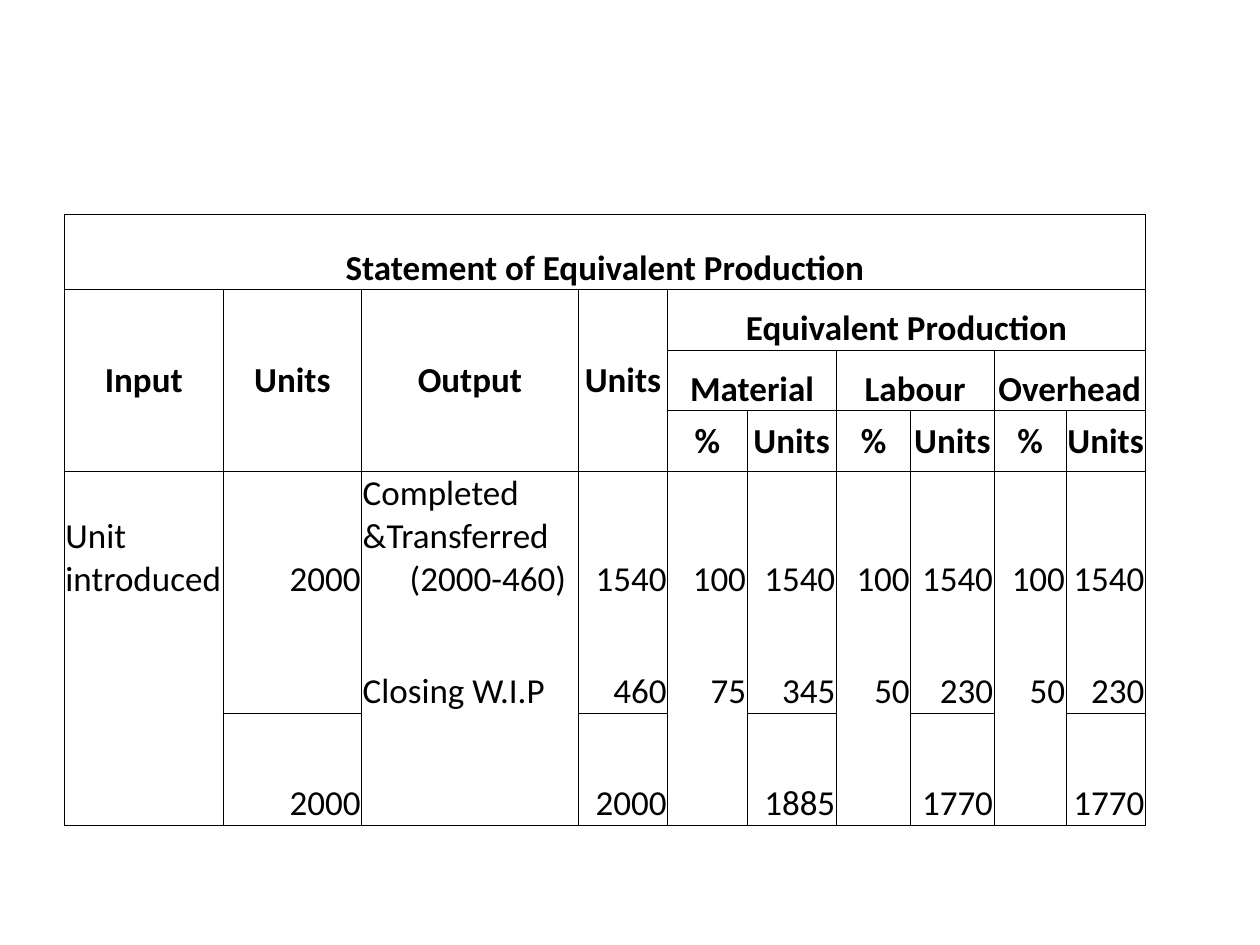
from dataclasses import dataclass

from lxml.etree import SubElement
from pptx import Presentation
from pptx.dml.color import RGBColor
from pptx.enum.text import MSO_ANCHOR, PP_ALIGN
from pptx.oxml.ns import qn
from pptx.util import Cm, Pt


@dataclass(frozen=True)
class Theme:
    font: str = "Calibri"
    size: Pt = Pt(20)
    ink: str = "000000"
    border: Pt = Pt(0.5)
    margin: Cm = Cm(0.02)
    indent: Cm = Cm(0.95)


THEME = Theme()

COLUMN_WIDTHS = [3.2, 2.79, 4.37, 1.8, 1.6, 1.8, 1.5, 1.68, 1.45, 1.6]
ROW_HEIGHTS = [1.52, 1.22, 1.22, 1.22, 2.26, 2.26, 2.26]
HEADER_ROWS = 4
TOTAL_ROW = len(ROW_HEIGHTS) - 1

# Headings: row, column, rows spanned, columns spanned, text, anchor
HEADINGS = [
    (0, 0, 1, 10, "Statement of Equivalent Production", MSO_ANCHOR.BOTTOM),
    *[(1, column, 3, 1, text, MSO_ANCHOR.MIDDLE)
      for column, text in enumerate(["Input", "Units", "Output", "Units"])],
    (1, 4, 1, 6, "Equivalent Production", MSO_ANCHOR.BOTTOM),
    *[(2, 4 + 2 * pair, 1, 2, text, MSO_ANCHOR.BOTTOM)
      for pair, text in enumerate(["Material", "Labour", "Overhead"])],
    *[(3, column, 1, 1, "Units" if column % 2 else "%", MSO_ANCHOR.MIDDLE)
      for column in range(4, 10)],
]

BODY = [
    ["Unit introduced", "2000", "Completed &Transferred\n(2000-460)", "1540",
     "100", "1540", "100", "1540", "100", "1540"],
    ["", "", "Closing W.I.P", "460", "75", "345", "50", "230", "50", "230"],
    ["", "2000", "", "2000", "", "1885", "", "1770", "", "1770"],
]
TEXT_COLUMNS = (0, 2)


def set_border(cell, side, visible):
    line = SubElement(cell._tc.get_or_add_tcPr(), qn(f"a:ln{side}"), w=str(THEME.border))
    if visible:
        fill = SubElement(line, qn("a:solidFill"))
        SubElement(fill, qn("a:srgbClr"), val=THEME.ink)
    else:
        SubElement(line, qn("a:noFill"))


def format_cell(cell, row, column):
    """Rule the cell; only unit columns get a line above the totals."""
    has_total = column % 2 == 1
    top = row <= HEADER_ROWS or (row == TOTAL_ROW and has_total)
    bottom = row < HEADER_ROWS or row == TOTAL_ROW or (row == TOTAL_ROW - 1 and has_total)
    for side, visible in (("L", True), ("R", True), ("T", top), ("B", bottom)):
        set_border(cell, side, visible)
    cell.fill.background()
    cell.margin_left = cell.margin_right = cell.margin_top = THEME.margin
    cell.margin_bottom = 0


def write_cell(cell, text, alignment, anchor=MSO_ANCHOR.BOTTOM, bold=False):
    cell.text = text
    cell.vertical_anchor = anchor
    for paragraph in cell.text_frame.paragraphs:
        paragraph.alignment = alignment
        font = paragraph.font
        font.name, font.size, font.bold = THEME.font, THEME.size, bold
        font.color.rgb = RGBColor.from_string(THEME.ink)


def add_statement_table(slide):
    frame = slide.shapes.add_table(
        len(ROW_HEIGHTS), len(COLUMN_WIDTHS), Cm(1.3), Cm(4.32),
        Cm(sum(COLUMN_WIDTHS)), Cm(sum(ROW_HEIGHTS)))
    table = frame.table
    table.first_row = table.horz_banding = False
    for column, width in zip(table.columns, COLUMN_WIDTHS):
        column.width = Cm(width)
    for row, height in zip(table.rows, ROW_HEIGHTS):
        row.height = Cm(height)
    for row in range(len(ROW_HEIGHTS)):
        for column in range(len(COLUMN_WIDTHS)):
            format_cell(table.cell(row, column), row, column)
    return table


def fill_headings(table):
    for row, column, row_span, column_span, text, anchor in HEADINGS:
        cell = table.cell(row, column)
        if row_span * column_span > 1:
            cell.merge(table.cell(row + row_span - 1, column + column_span - 1))
        write_cell(cell, text, PP_ALIGN.CENTER, anchor, bold=True)


def fill_body(table):
    for row, values in enumerate(BODY, HEADER_ROWS):
        for column, text in enumerate(values):
            alignment = PP_ALIGN.LEFT if column in TEXT_COLUMNS else PP_ALIGN.RIGHT
            write_cell(table.cell(row, column), text, alignment)
    # The calculation is indented under the completed output
    calculation = table.cell(HEADER_ROWS, 2).text_frame.paragraphs[1]
    calculation._p.get_or_add_pPr().set("marL", str(THEME.indent))


def main():
    presentation = Presentation()
    presentation.slide_width, presentation.slide_height = Cm(25.4), Cm(19.05)
    slide = presentation.slides.add_slide(presentation.slide_layouts[6])

    # Statement of equivalent production
    table = add_statement_table(slide)
    fill_headings(table)
    fill_body(table)

    presentation.save("out.pptx")


if __name__ == "__main__":
    main()
